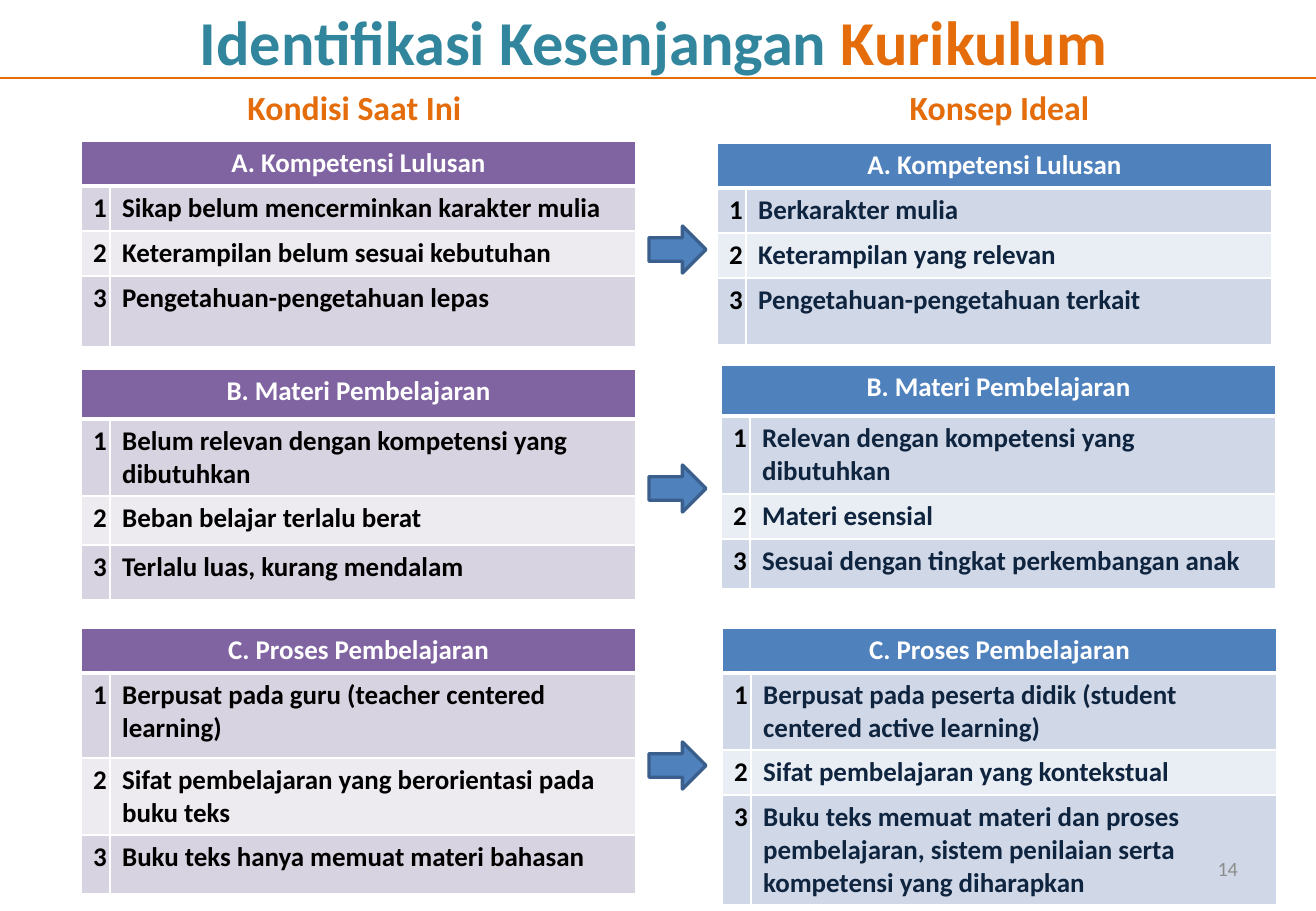
from lxml import etree
from pptx import Presentation
from pptx.dml.color import RGBColor
from pptx.enum.shapes import MSO_CONNECTOR, MSO_SHAPE
from pptx.enum.text import MSO_ANCHOR, PP_ALIGN
from pptx.oxml.ns import qn
from pptx.util import Emu, Pt

PX = 7526
SLIDE_W, SLIDE_H = 1316, 911
FONT = "Calibri"
LEFT, CENTER, RIGHT = PP_ALIGN.LEFT, PP_ALIGN.CENTER, PP_ALIGN.RIGHT
TOP, MIDDLE = MSO_ANCHOR.TOP, MSO_ANCHOR.MIDDLE
STRAIGHT, RIGHT_ARROW = MSO_CONNECTOR.STRAIGHT, MSO_SHAPE.RIGHT_ARROW

COLORS = {
    "white": "FFFFFF", "black": "000000", "navy": "0F243E",
    "teal": "31859C", "orange": "E46C0A", "gray": "8C8C8C",
    "purple": "8064A2", "purple_mid": "D8D3E0", "purple_pale": "EDEAF0",
    "blue": "4F81BD", "blue_mid": "D0D8E8", "blue_pale": "E9EDF4",
    "arrow_edge": "3A5F8C",
}
# header, odd rows, even rows, item text
CURRENT_STYLE = ("purple", "purple_mid", "purple_pale", "black")
IDEAL_STYLE = ("blue", "blue_mid", "blue_pale", "navy")

NUMBER_W, ITEM_W = 29, 526
ARROW_TOPS = (226, 465, 742)

COMPETENCE = "A. Kompetensi Lulusan"
MATERIAL = "B. Materi Pembelajaran"
PROCESS = "C. Proses Pembelajaran"

# left, top, row heights, heading, items
CURRENT_TABLES = [
    (81, 141, (45, 45, 45, 71), COMPETENCE,
     ("Sikap belum mencerminkan karakter mulia",
      "Keterampilan belum sesuai kebutuhan",
      "Pengetahuan-pengetahuan lepas")),
    (81, 369, (50, 76, 49, 55), MATERIAL,
     ("Belum relevan dengan kompetensi yang dibutuhkan",
      "Beban belajar terlalu berat",
      "Terlalu luas, kurang mendalam")),
    (81, 628, (45, 85, 77, 59), PROCESS,
     ("Berpusat pada guru (teacher centered learning)",
      "Sifat pembelajaran yang berorientasi pada buku teks",
      "Buku teks hanya memuat materi bahasan")),
]
IDEAL_TABLES = [
    (717, 143, (45, 45, 45, 67), COMPETENCE,
     ("Berkarakter mulia",
      "Keterampilan yang relevan",
      "Pengetahuan-pengetahuan terkait")),
    (721, 365, (51, 78, 45, 50), MATERIAL,
     ("Relevan dengan kompetensi yang dibutuhkan",
      "Materi esensial",
      "Sesuai dengan tingkat perkembangan anak")),
    (722, 628, (45, 77, 45, 109), PROCESS,
     ("Berpusat pada peserta didik (student centered active learning)",
      "Sifat pembelajaran yang kontekstual",
      "Buku teks memuat materi dan proses pembelajaran, sistem penilaian "
      "serta kompetensi yang diharapkan")),
]


def px(*lengths):
    return [Emu(length * PX) for length in lengths]


def rgb(color):
    return RGBColor.from_string(COLORS[color])


def add_run(paragraph, text, size, color, bold=True):
    run = paragraph.add_run()
    run.text = text
    run.font.name = FONT
    run.font.size = Pt(size)
    run.font.bold = bold
    run.font.color.rgb = rgb(color)


def add_label(slide, box, runs, size, align=CENTER, anchor=TOP, bold=True):
    """Add a one-line text box; runs is a list of (text, color)."""
    frame = slide.shapes.add_textbox(*px(*box)).text_frame
    frame.word_wrap = True
    frame.vertical_anchor = anchor
    paragraph = frame.paragraphs[0]
    paragraph.alignment = align
    for text, color in runs:
        add_run(paragraph, text, size, color, bold)


def set_borders(cell, top, bottom):
    """Draw white borders: 1 pt at the sides, given widths above and below."""
    properties = cell._tc.get_or_add_tcPr()
    for tag, width in (("lnL", 1), ("lnR", 1), ("lnT", top), ("lnB", bottom)):
        border = etree.SubElement(properties, qn("a:" + tag), w=str(Pt(width)))
        fill = etree.SubElement(border, qn("a:solidFill"))
        etree.SubElement(fill, qn("a:srgbClr"), val=COLORS["white"])


def fill_cell(cell, text, color, fill, align=LEFT, top=1, bottom=1):
    set_borders(cell, top, bottom)
    cell.fill.solid()
    cell.fill.fore_color.rgb = rgb(fill)
    paragraph = cell.text_frame.paragraphs[0]
    paragraph.alignment = align
    if text:
        add_run(paragraph, text, 16, color)


def add_gap_table(slide, style, left, top, heights, heading, items):
    header, odd, even, item_color = style
    table = slide.shapes.add_table(
        len(heights), 2, *px(left, top, NUMBER_W + ITEM_W, sum(heights))).table
    table.columns[0].width, table.columns[1].width = px(NUMBER_W, ITEM_W)
    for row, height in zip(table.rows, px(*heights)):
        row.height = height
    table.cell(0, 0).merge(table.cell(0, 1))
    fill_cell(table.cell(0, 0), heading, "white", header, CENTER, bottom=3)
    fill_cell(table.cell(0, 1), "", "white", header, bottom=3)
    for number, item in enumerate(items, 1):
        band = odd if number % 2 else even
        top_width = 3 if number == 1 else 1
        fill_cell(table.cell(number, 0), str(number), "black", band, top=top_width)
        fill_cell(table.cell(number, 1), item, item_color, band, top=top_width)


def add_rule(slide, y):
    rule = slide.shapes.add_connector(STRAIGHT, *px(0, y, SLIDE_W, y))
    rule.line.color.rgb = rgb("orange")
    rule.line.width = Pt(0.75)
    etree.SubElement(rule._element.spPr, qn("a:effectLst"))


def add_arrow(slide, top):
    arrow = slide.shapes.add_shape(RIGHT_ARROW, *px(649, top, 57, 47))
    arrow.shadow.inherit = False
    arrow.fill.solid()
    arrow.fill.fore_color.rgb = rgb("blue")
    arrow.line.color.rgb = rgb("arrow_edge")
    arrow.line.width = Pt(2)


def main():
    deck = Presentation()
    deck.slide_width, deck.slide_height = px(SLIDE_W, SLIDE_H)
    slide = deck.slides.add_slide(deck.slide_layouts[6])

    add_label(slide, (23, 0, 1261, 81),
              [("Identifikasi Kesenjangan ", "teal"), ("Kurikulum", "orange")],
              37, anchor=MIDDLE)
    add_rule(slide, 78)
    add_label(slide, (101, 81, 507, 53), [("Kondisi Saat Ini", "orange")], 20)
    add_label(slide, (746, 81, 507, 53), [("Konsep Ideal", "orange")], 20)

    for style, tables in ((CURRENT_STYLE, CURRENT_TABLES),
                          (IDEAL_STYLE, IDEAL_TABLES)):
        for content in tables:
            add_gap_table(slide, style, *content)
    for top in ARROW_TOPS:
        add_arrow(slide, top)
    add_label(slide, (943, 844, 307, 49), [("14", "gray")], 12,
              RIGHT, MIDDLE, bold=False)

    deck.save("out.pptx")


if __name__ == "__main__":
    main()
